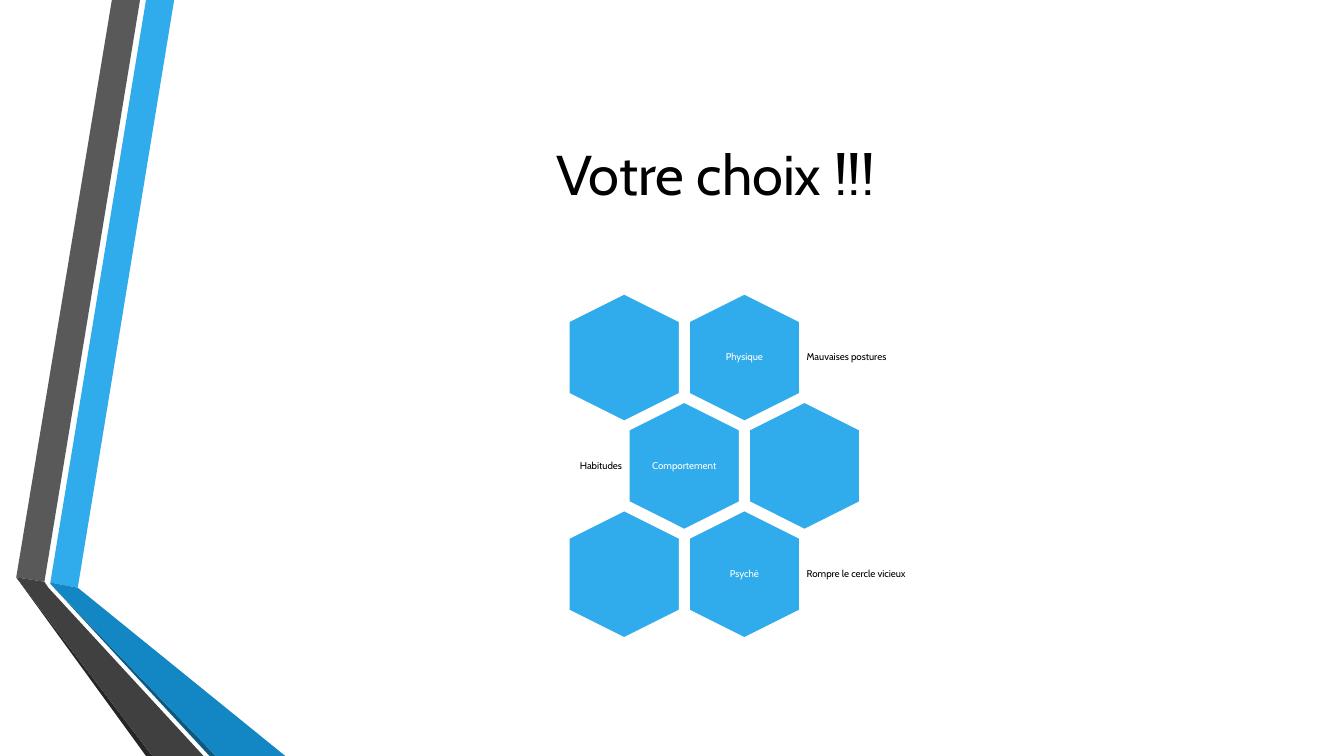
from collections import namedtuple
from dataclasses import dataclass

from pptx import Presentation
from pptx import util as u
from pptx.dml.color import RGBColor
from pptx.enum import shapes, text

Box = namedtuple("Box", "left top width height")


@dataclass(frozen=True)
class Theme:
    font: str = "Cabin"
    title_size: float = 40
    label_size: float = 7
    black: str = "000000"
    white: str = "FFFFFF"
    blue: str = "30ACEC"
    blue_shade: str = "1287C3"
    blue_edge: str = "0C5A82"
    grey: str = "595959"
    grey_shade: str = "404040"
    grey_edge: str = "262626"


THEME = Theme()

RIBBONS = [
    (THEME.blue, [(1.27, 14.68), (1.96, 14.81), (4.39, 0), (3.68, 0)]),
    (THEME.grey, [(3.53, 0), (2.82, 0), (0.41, 14.55), (1.12, 14.66)]),
    (THEME.grey_edge, [(0.41, 14.55), (3.68, 19.05), (3.84, 19.05)]),
    (THEME.blue_edge, [(1.27, 14.71), (5.28, 19.05), (5.44, 19.05)]),
    (THEME.blue_shade, [(1.27, 14.71), (5.44, 19.05), (7.19, 19.05),
                        (1.96, 14.81), (1.27, 14.68)]),
    (THEME.grey_shade, [(5.13, 19.05), (1.22, 14.81), (1.12, 14.66),
                        (0.41, 14.55), (3.84, 19.05)]),
]

Choice = namedtuple("Choice", "column label caption")
CHOICES = [
    Choice(1, "Physique", "Mauvaises postures"),
    Choice(0, "Comportement", "Habitudes"),
    Choice(1, "Psyché", "Rompre le cercle vicieux"),
]


def place(shape, box):
    shape.left, shape.top, shape.width, shape.height = map(u.Cm, box)


def paint(shape, color):
    shape.shadow.inherit = False
    shape.fill.solid()
    shape.fill.fore_color.rgb = RGBColor.from_string(color)


def style(para, size, color, align):
    para.alignment = align
    para.font.name = THEME.font
    para.font.size = u.Pt(size)
    para.font.color.rgb = RGBColor.from_string(color)


def add_ribbons(page, box):
    group = page.shapes.add_group_shape()
    for color, points in RIBBONS:
        corners = [(u.Cm(box.left + x), u.Cm(box.top + y)) for x, y in points]
        builder = group.shapes.build_freeform(*corners[0])
        builder.add_line_segments(corners[1:], close=True)
        ribbon = builder.convert_to_shape()
        paint(ribbon, color)
        ribbon.line.fill.background()


def add_title(page, box, wording):
    title = page.shapes.title
    place(title, box)
    frame = title.text_frame
    frame.text = wording
    frame.vertical_anchor = text.MSO_ANCHOR.MIDDLE
    style(frame.paragraphs[0], THEME.title_size, THEME.black, text.PP_ALIGN.CENTER)


def add_label(group, box, wording, color, align):
    label = group.shapes.add_textbox(*map(u.Cm, box))
    frame = label.text_frame
    frame.word_wrap = True
    frame.vertical_anchor = text.MSO_ANCHOR.MIDDLE
    frame.margin_left = frame.margin_right = u.Cm(0.07)
    frame.margin_top = frame.margin_bottom = u.Cm(0.07)
    frame.text = wording
    para = frame.paragraphs[0]
    para.line_spacing = 0.9
    style(para, THEME.label_size, color, align)


def add_hexagon(group, x, y):
    length, breadth = 3.22, 2.8
    box = Box(x - length / 2, y - breadth / 2, length, breadth)
    hexagon = group.shapes.add_shape(shapes.MSO_SHAPE.HEXAGON, *map(u.Cm, box))
    hexagon.rotation = 90
    hexagon.adjustments[0] = 0.25
    hexagon.adjustments[1] = 1.1547
    paint(hexagon, THEME.blue)
    hexagon.line.color.rgb = RGBColor.from_string(THEME.white)
    hexagon.line.width = u.Pt(1.25)


def add_honeycomb(page, box):
    column_step, row_step = 3.03, 2.73
    label_width, label_height = 1.93, 2.21
    caption_width, caption_height, caption_gap = 3.55, 1.93, 1.5
    group = page.shapes.add_group_shape()
    for row, choice in enumerate(CHOICES):
        first_x = box.left + 3.49 + row % 2 * column_step / 2
        y = box.top + 1.61 + row * row_step
        for column in range(2):
            add_hexagon(group, first_x + column * column_step, y)
        x = first_x + choice.column * column_step
        label_box = Box(x - label_width / 2, y - label_height / 2, label_width, label_height)
        add_label(group, label_box, choice.label, THEME.white, text.PP_ALIGN.CENTER)
        if choice.column:
            caption_left, align = x + caption_gap, text.PP_ALIGN.LEFT
        else:
            caption_left, align = x - caption_gap - caption_width, text.PP_ALIGN.RIGHT
        caption_box = Box(caption_left, y - caption_height / 2, caption_width, caption_height)
        add_label(group, caption_box, choice.caption, THEME.black, align)


def main():
    deck = Presentation()
    deck.slide_width, deck.slide_height = u.Cm(33.87), u.Cm(19.05)
    page = deck.slides.add_slide(deck.slide_layouts[5])
    add_ribbons(page, Box(0, 0, 7.19, 19.05))
    add_title(page, Box(4.11, 1.91, 27.84, 4.88), "Votre choix !!!")
    add_honeycomb(page, Box(12.24, 7.4, 11.58, 8.69))
    deck.save("out.pptx")


if __name__ == "__main__":
    main()
